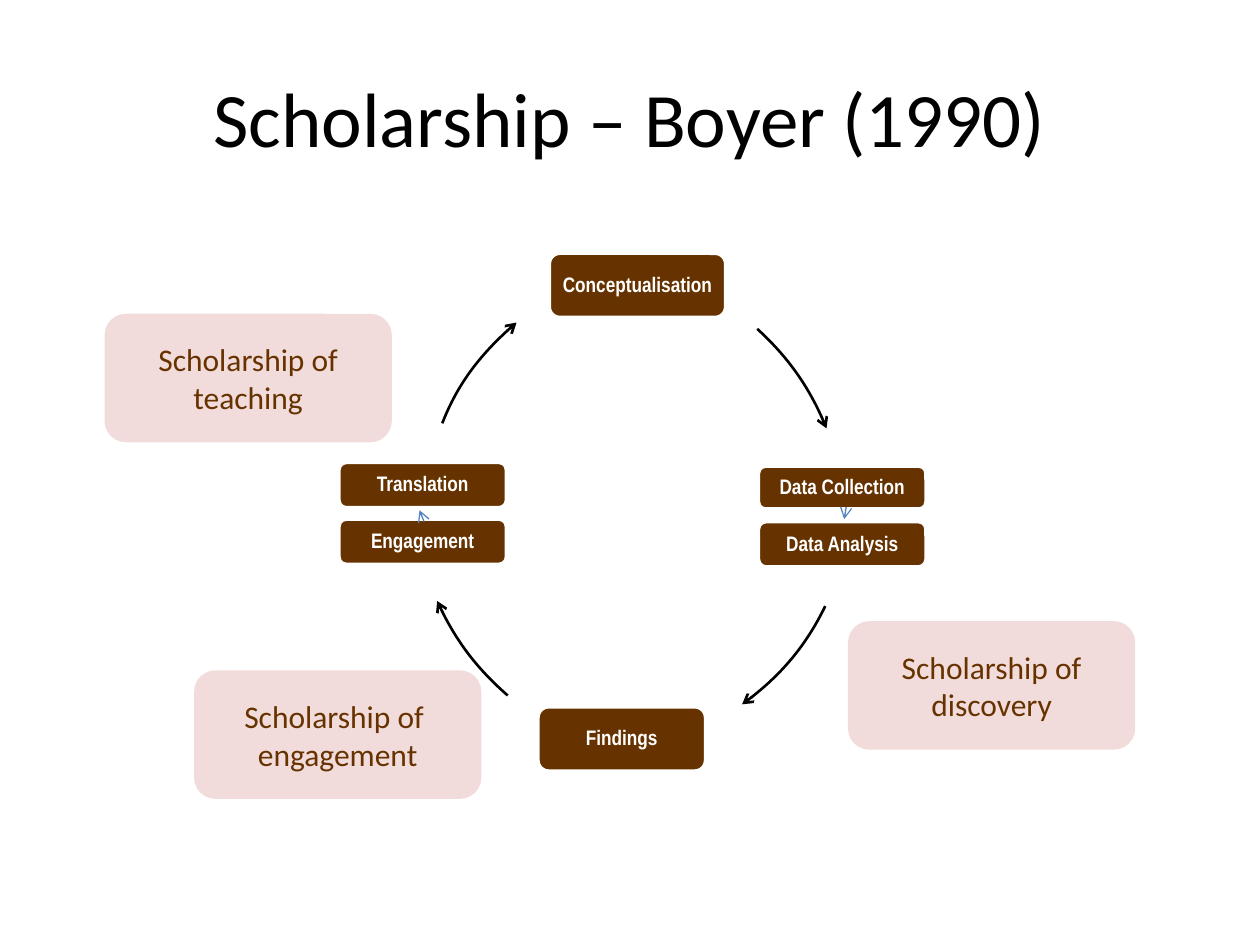
from dataclasses import dataclass

from lxml import etree
from pptx import Presentation
from pptx.dml.color import RGBColor
from pptx.enum.shapes import MSO_SHAPE
from pptx.enum.text import MSO_ANCHOR, PP_ALIGN
from pptx.oxml.ns import qn
from pptx.util import Inches, Pt

ROUNDED = MSO_SHAPE.ROUNDED_RECTANGLE
MIDDLE = MSO_ANCHOR.MIDDLE
CENTER = PP_ALIGN.CENTER

BROWN, PINK, WHITE, BLACK, BLUE = "663300", "F2DCDB", "FFFFFF", "000000", "4F81BD"
CIRCLE = Inches(4.08)
STEP_FONT = {"name": "Arial Narrow", "size": Pt(12), "bold": True}
NOTE_FONT = {"name": "Calibri", "size": Pt(18)}
TITLE_FONT = {"name": "Calibri", "size": Pt(44)}
STEP_INSETS = dict.fromkeys(
    ("margin_left", "margin_right", "margin_top", "margin_bottom"), Inches(0.05)
)


@dataclass
class Step:
    text: str
    x: float
    y: float
    h: float
    w: float = 1.33


@dataclass
class Note:
    text: str
    x: float
    y: float


@dataclass
class Arc:
    x: float
    y: float
    points: list[tuple[float, float]]
    color: str = BLACK
    width: float = 1.5


STEPS = [
    Step("Conceptualisation", 4.36, 2.01, 0.51, 1.4),
    Step("Data Collection", 6.02, 3.7, 0.34),
    Step("Data Analysis", 6.02, 4.14, 0.36),
    Step("Findings", 4.27, 5.61, 0.51),
    Step("Engagement", 2.69, 4.12, 0.36),
    Step("Translation", 2.69, 3.67, 0.36),
]
ARCS = [
    Arc(2.61, 2.1, [(6.01, 2.61), (6.25, 2.83), (6.44, 3.1), (6.56, 3.4)]),
    Arc(2.69, 1.52, [(6.71, 4.06), (6.71, 4.08), (6.7, 4.1), (6.7, 4.12)], BLUE, 0.75),
    Arc(2.68, 1.88, [(6.55, 4.81), (6.4, 5.12), (6.17, 5.39), (5.89, 5.59)]),
    Arc(3.31, 1.93, [(4.03, 5.52), (3.79, 5.31), (3.6, 5.06), (3.47, 4.77)]),
    Arc(3.21, 1.32, [(3.35, 4.1), (3.34, 4.08), (3.34, 4.07), (3.33, 4.05)], BLUE, 0.75),
    Arc(3.35, 2.09, [(3.51, 3.36), (3.63, 3.05), (3.84, 2.78), (4.1, 2.56)]),
]
NOTES = [
    Note("Scholarship of discovery", 6.73, 4.93),
    Note("Scholarship of  engagement", 1.54, 5.32),
    Note("Scholarship of teaching", 0.83, 2.49),
]


def rgb(value: str) -> RGBColor:
    return RGBColor.from_string(value)


def apply(target, values: dict) -> None:
    for name, value in values.items():
        setattr(target, name, value)


def write(sp, text: str, font: dict, color: str) -> None:
    tf = sp.text_frame
    apply(tf, {"word_wrap": True, "vertical_anchor": MIDDLE})
    p = tf.paragraphs[0]
    p.alignment = CENTER
    r = p.add_run()
    r.text = text
    apply(r.font, font)
    r.font.color.rgb = rgb(color)


def add_box(slide, x: float, y: float, w: float, h: float, fill: str):
    sp = slide.shapes.add_shape(ROUNDED, Inches(x), Inches(y), Inches(w), Inches(h))
    sp.shadow.inherit = False
    sp.fill.solid()
    sp.fill.fore_color.rgb = rgb(fill)
    return sp


def add_step(slide, step: Step) -> None:
    sp = add_box(slide, step.x, step.y, step.w, step.h, BROWN)
    sp.line.color.rgb = rgb(WHITE)
    sp.line.width = Pt(2)
    write(sp, step.text, STEP_FONT, WHITE)
    apply(sp.text_frame, STEP_INSETS)
    sp.text_frame.paragraphs[0].line_spacing = 0.9


def add_note(slide, note: Note) -> None:
    sp = add_box(slide, note.x, note.y, 2.28, 1.02, PINK)
    sp.line.fill.background()
    write(sp, note.text, NOTE_FONT, BROWN)


def add_arc(slide, arc: Arc) -> None:
    start, *rest = [(Inches(x), Inches(y)) for x, y in arc.points]
    builder = slide.shapes.build_freeform(*start)
    builder.add_line_segments(rest, close=False)
    sp = builder.convert_to_shape()
    sp.shadow.inherit = False
    sp.fill.background()
    sp.line.color.rgb = rgb(arc.color)
    sp.line.width = Pt(arc.width)
    spPr = sp._element.spPr
    etree.SubElement(spPr.find(qn("a:ln")), qn("a:tailEnd"), type="arrow")
    outline = next(spPr.iter(qn("a:path")))
    segments = outline.findall(qn("a:lnTo"))
    curve = etree.SubElement(outline, qn("a:cubicBezTo"))
    for segment in segments:
        curve.append(segment[0])
        outline.remove(segment)
    left, top = Inches(arc.x), Inches(arc.y)
    for pt, (x, y) in zip(outline.iter(qn("a:pt")), [start, *rest]):
        pt.set("x", str(x - left))
        pt.set("y", str(y - top))
    for side in ("w", "h"):
        outline.set(side, str(CIRCLE))
    apply(sp, {"left": left, "top": top, "width": CIRCLE, "height": CIRCLE})


def main() -> None:
    prs = Presentation()
    prs.slide_width, prs.slide_height = Inches(10), Inches(7.5)
    slide = prs.slides.add_slide(prs.slide_layouts[5])
    title = slide.shapes.title
    apply(title, {"left": Inches(0.5), "top": Inches(0.3),
                  "width": Inches(9), "height": Inches(1.25)})
    write(title, "Scholarship – Boyer (1990)", TITLE_FONT, BLACK)
    for step, arc in zip(STEPS, ARCS):
        add_step(slide, step)
        add_arc(slide, arc)
    for note in NOTES:
        add_note(slide, note)
    prs.save("out.pptx")


if __name__ == "__main__":
    main()
